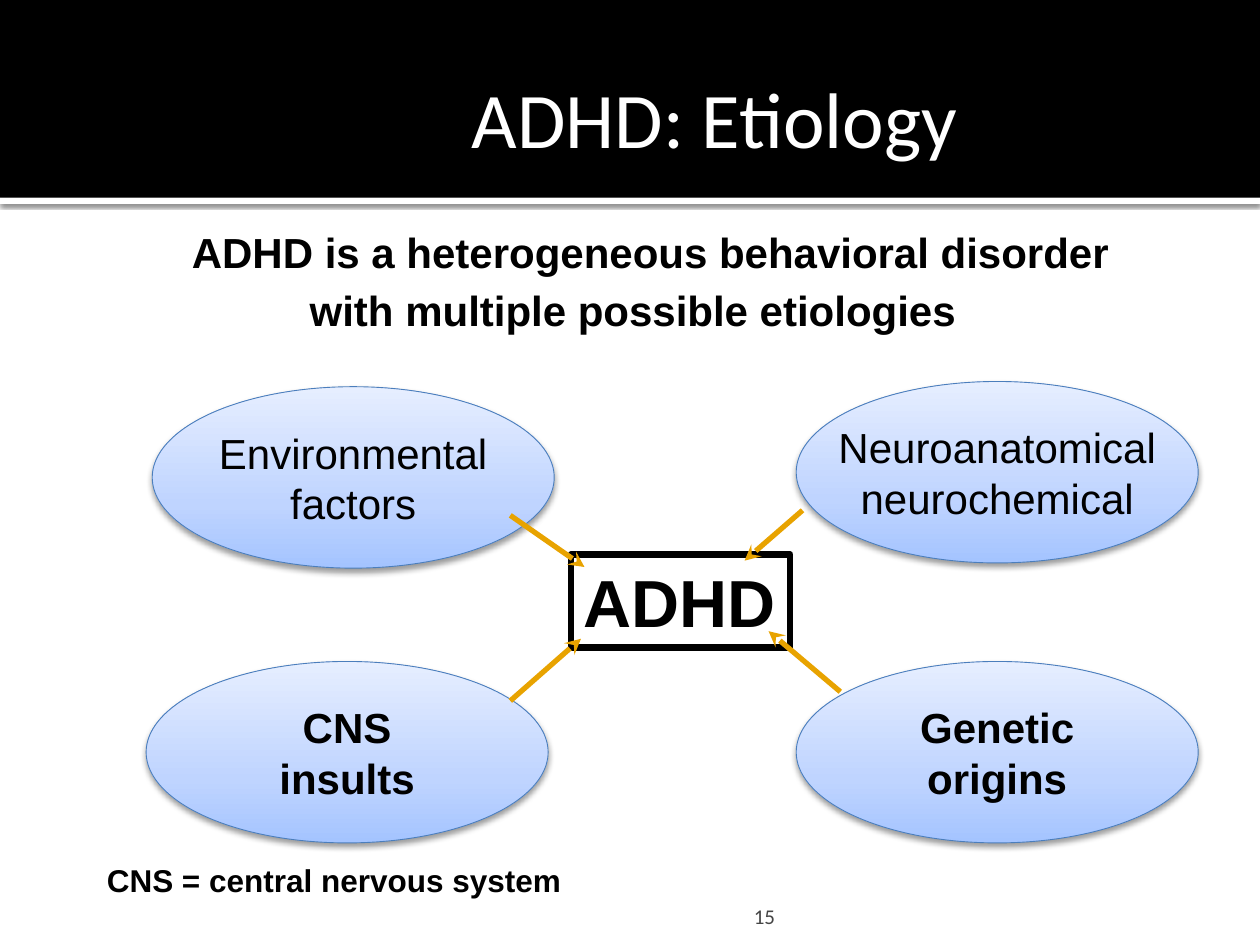
from pptx import Presentation
from pptx.dml.color import RGBColor
from pptx.enum.shapes import MSO_CONNECTOR, MSO_SHAPE
from pptx.enum.text import MSO_ANCHOR as Anchor, PP_ALIGN as Align
from pptx.oxml import parse_xml
from pptx.oxml.ns import nsdecls
from pptx.util import Pt

COLORS = {
    "black": "000000",
    "white": "FFFFFF",
    "number": "454545",
    "arrow": "E8A300",
    "oval_line": "4B7EBC",
    "oval_bottom": "A4C4FF",
    "oval_middle": "BFD4FF",
    "oval_top": "E6EEFF",
}
OVAL_SIZE = (229.7, 103.7)
OVALS = [  # left, top, text, bold
    (83.5, 378, "CNS\vinsults", True),
    (455, 378, "Genetic\vorigins", True),
    (455, 218, "Neuroanatomical\vneurochemical", False),
    (87, 221, "Environmental\vfactors", False),
]
ARROWS = [  # start x, start y, end x, end y
    (291.6, 400.5, 332, 365),
    (291.6, 294.5, 334, 324),
    (458.6, 291.6, 425.5, 320.4),
    (480.2, 395.3, 439.2, 360.7),
]


def rgb(name):
    return RGBColor.from_string(COLORS[name])


def points(*lengths):
    return [Pt(length) for length in lengths]


def write_text(shape, text, size, font="Arial", color="black", bold=False,
               align=Align.CENTER, anchor=Anchor.MIDDLE, wrap=False):
    frame = shape.text_frame
    frame.text = text
    frame.word_wrap = wrap
    frame.vertical_anchor = anchor
    paragraph = frame.paragraphs[0]
    paragraph.alignment = align
    paragraph.font.name = font
    paragraph.font.size = Pt(size)
    paragraph.font.bold = bold
    paragraph.font.color.rgb = rgb(color)
    return paragraph


def add_text(slide, box, text, size, **style):
    return write_text(slide.shapes.add_textbox(*points(*box)), text, size, **style)


def add_rectangle(slide, box, fill):
    shape = slide.shapes.add_shape(MSO_SHAPE.RECTANGLE, *points(*box))
    shape.shadow.inherit = False
    shape.fill.solid()
    shape.fill.fore_color.rgb = rgb(fill)
    shape.line.fill.background()
    return shape


def add_shadow(shape, blur, distance, opacity):
    """Give the shape a black shadow that falls straight down."""
    shape.shadow.inherit = False
    effects = shape._element.spPr.find("{*}effectLst")
    effects.append(parse_xml(
        f'<a:outerShdw {nsdecls("a")} blurRad="{Pt(blur)}" dist="{Pt(distance)}" '
        f'dir="5400000" rotWithShape="0"><a:srgbClr val="{COLORS["black"]}">'
        f'<a:alpha val="{opacity * 1000}"/></a:srgbClr></a:outerShdw>'))


def fill_upward_gradient(shape, stops):
    shape.fill.background()
    properties = shape._element.spPr
    stop_xml = "".join(
        f'<a:gs pos="{position * 1000}"><a:srgbClr val="{COLORS[name]}"/></a:gs>'
        for position, name in stops)
    gradient = parse_xml(
        f'<a:gradFill {nsdecls("a")} rotWithShape="1"><a:gsLst>{stop_xml}</a:gsLst>'
        '<a:lin ang="16200000" scaled="0"/></a:gradFill>')
    properties.replace(properties.find("{*}noFill"), gradient)


def add_oval(slide, left, top, text, bold):
    oval = slide.shapes.add_shape(MSO_SHAPE.OVAL, *points(left, top, *OVAL_SIZE))
    fill_upward_gradient(
        oval, [(0, "oval_bottom"), (35, "oval_middle"), (100, "oval_top")])
    oval.line.color.rgb = rgb("oval_line")
    oval.line.width = Pt(0.5)
    add_shadow(oval, 3.5, 2, 38)
    write_text(oval, text, 24, bold=bold)


def add_arrow(slide, *ends):
    arrow = slide.shapes.add_connector(MSO_CONNECTOR.STRAIGHT, *points(*ends))
    arrow.line.color.rgb = rgb("arrow")
    arrow.line.width = Pt(3)
    arrow.line._get_or_add_ln().append(
        parse_xml(f'<a:tailEnd {nsdecls("a")} type="stealth"/>'))
    arrow._element.spPr.append(parse_xml(f'<a:effectLst {nsdecls("a")}/>'))


def add_header(slide):
    rule = add_rectangle(slide, (0, 113, 720, 3.6), "white")
    add_shadow(rule, 2.5, 0.8, 60)
    band = add_rectangle(slide, (0, 0, 720, 113), "black")
    title = slide.shapes.title
    band._element.addnext(title._element)
    title.left, title.top, title.width, title.height = points(113, 21.6, 590.4, 90)
    write_text(title, "ADHD: Etiology", 45, font="Calibri", color="white", wrap=True)


def add_statement(slide):
    paragraph = add_text(
        slide, (51, 121.7, 648, 72.7),
        "ADHD is a heterogeneous behavioral disorder \vwith multiple possible etiologies",
        24, bold=True, anchor=Anchor.TOP, wrap=True)
    paragraph.line_spacing = 1.15
    paragraph.space_before = Pt(7.2)
    tab = paragraph.add_run()
    tab.text = "\t"
    tab.font.size = Pt(20)


def add_center(slide):
    center = add_rectangle(slide, (326.2, 316.8, 125.3, 53.3), "white")
    center.line.color.rgb = rgb("black")
    center.line.width = Pt(3.78)
    write_text(center, "ADHD", 38, bold=True, align=Align.LEFT, anchor=Anchor.TOP)


def main():
    presentation = Presentation()
    presentation.slide_width, presentation.slide_height = points(720, 540)
    slide = presentation.slides.add_slide(presentation.slide_layouts[5])
    add_header(slide)
    add_statement(slide)
    add_text(slide, (52.6, 488.2, 276.5, 28.8), "CNS = central nervous system",
             18, bold=True)
    number = add_text(slide, (282.2, 496.8, 167.8, 37.4), "15", 12, font="Calibri",
                      color="number", align=Align.RIGHT, anchor=Anchor.BOTTOM, wrap=True)
    number.line_spacing = 1
    for oval in OVALS:
        add_oval(slide, *oval)
    add_center(slide)
    for arrow in ARROWS:
        add_arrow(slide, *arrow)
    presentation.save("out.pptx")


if __name__ == "__main__":
    main()
